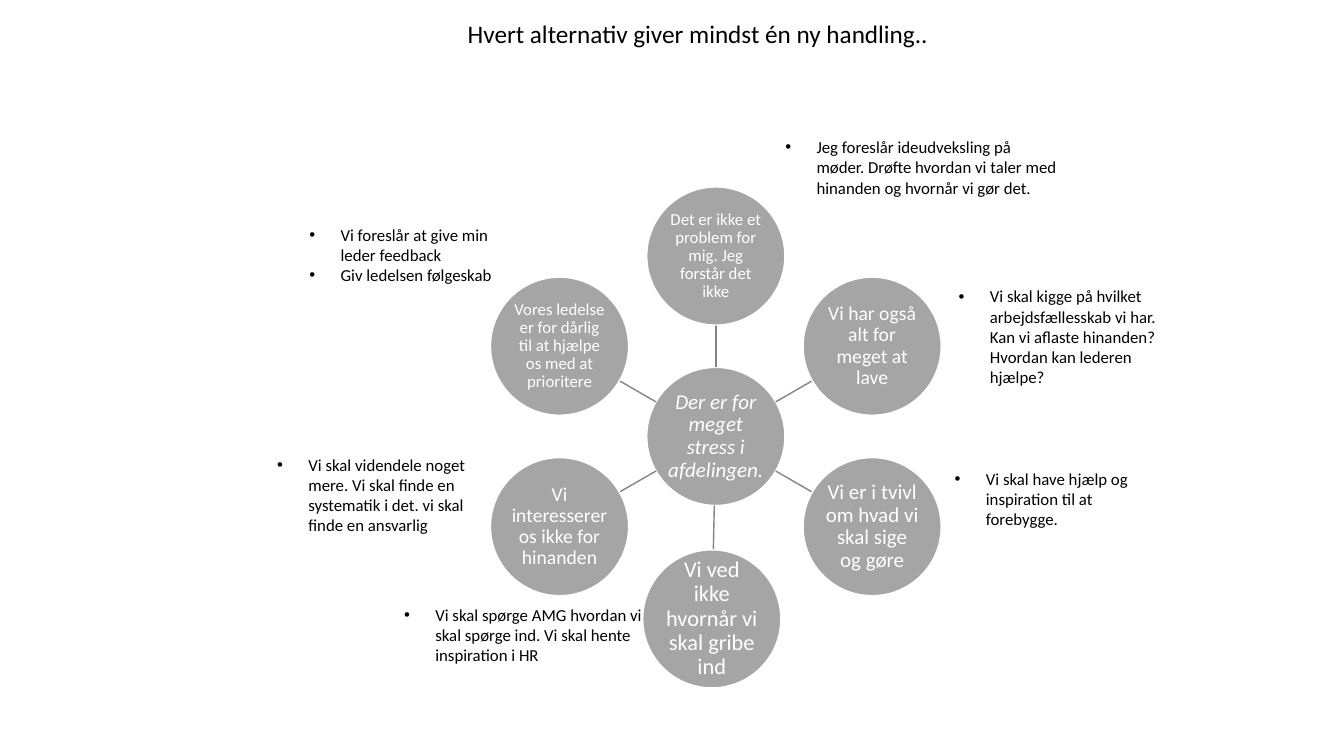
import math

from lxml import etree
from pptx import Presentation
from pptx.dml.color import RGBColor
from pptx.enum import shapes, text
from pptx.oxml.ns import qn
from pptx.util import Inches, Pt

TITLE = ("Hvert alternativ giver mindst én ny handling..", (4.54, 0.13, 5.99, 0.4))
HUB = ("Der er for meget stress i afdelingen.", 15)

# Clockwise from the top: text, type size, nudge from the ring
ALTERNATIVES = [
    ("Det er ikke et problem for mig. Jeg forstår det ikke", 12, (0, 0)),
    ("Vi har også alt for meget at lave", 14, (0, 0)),
    ("Vi er i tvivl om hvad vi skal sige og gøre", 15, (0, 0)),
    ("Vi ved ikke hvornår vi skal gribe ind", 16, (-0.04, 0.02)),
    ("Vi interesserer os ikke for hinanden", 14, (0, 0)),
    ("Vores ledelse er for dårlig til at hjælpe os med at prioritere", 12, (0, 0)),
]

# Bulleted lines, (left, top, width, height)
ACTIONS = [
    (["Vi foreslår at give min leder feedback", "Giv ledelsen følgeskab"],
     (2.97, 2.18, 2.2, 0.71)),
    (["Vi skal videndele noget mere. Vi skal finde en systematik i det. "
      "vi skal finde en ansvarlig"], (2.65, 4.46, 2.28, 0.91)),
    (["Vi skal spørge AMG hvordan vi skal spørge ind. Vi skal hente inspiration i HR"],
     (3.91, 5.95, 2.6, 0.71)),
    (["Jeg foreslår ideudveksling på møder. Drøfte hvordan vi taler med hinanden "
      "og hvornår vi gør det."], (7.69, 1.31, 2.91, 0.71)),
    (["Vi skal kigge på hvilket arbejdsfællesskab vi har. Kan vi aflaste hinanden? "
      "Hvordan kan lederen hjælpe?"], (9.41, 2.79, 2.2, 1.11)),
    (["Vi skal have hjælp og inspiration til at forebygge."], (9.37, 4.6, 2.2, 0.71)),
]

THEME = {
    "font": "Calibri",
    "title": 18,
    "action": 12,
    "ink": RGBColor(0, 0, 0),
    "white": RGBColor(255, 255, 255),
    "circle": RGBColor(0xA5, 0xA5, 0xA5),
    "spoke": RGBColor(0x84, 0x84, 0x84),
}
CENTER = (7.1, 4.33)
RING = 1.79
DIAMETER = 1.37
BULLET_INDENT = 0.31


def write(tf, lines, size, color, italic=None, align=None, spacing=None, bullet=False):
    tf.word_wrap = True
    for i, line in enumerate(lines):
        p = tf.add_paragraph() if i else tf.paragraphs[0]
        p.alignment = align
        p.line_spacing = spacing
        if bullet:
            pPr = p._p.get_or_add_pPr()
            pPr.set("marL", str(Inches(BULLET_INDENT)))
            pPr.set("indent", str(Inches(-BULLET_INDENT)))
            etree.SubElement(pPr, qn("a:buFont")).set("typeface", "Arial")
            etree.SubElement(pPr, qn("a:buChar")).set("char", "•")
        r = p.add_run()
        r.text = line
        r.font.name = THEME["font"]
        r.font.size = Pt(size)
        r.font.italic = italic
        r.font.color.rgb = color


def add_text_box(slide, lines, box, size, bullet=False):
    tf = slide.shapes.add_textbox(*map(Inches, box)).text_frame
    write(tf, lines, size, THEME["ink"], bullet=bullet)
    tf.auto_size = text.MSO_AUTO_SIZE.SHAPE_TO_FIT_TEXT


def add_circle(slide, label, center, size, italic=None):
    left, top = (c - DIAMETER / 2 for c in center)
    sp = slide.shapes.add_shape(shapes.MSO_SHAPE.OVAL, Inches(left), Inches(top),
                                Inches(DIAMETER), Inches(DIAMETER))
    sp.shadow.inherit = False
    sp.fill.solid()
    sp.fill.fore_color.rgb = THEME["circle"]
    sp.line.color.rgb = THEME["white"]
    sp.line.width = Pt(1)
    tf = sp.text_frame
    tf.margin_left = tf.margin_right = tf.margin_top = tf.margin_bottom = Inches(0.01)
    tf.vertical_anchor = text.MSO_ANCHOR.MIDDLE
    write(tf, [label], size, THEME["white"], italic=italic,
          align=text.PP_ALIGN.CENTER, spacing=0.9)


def add_spoke(slide, center):
    """Line from the edge of the hub to the edge of the circle at center."""
    dx, dy = center[0] - CENTER[0], center[1] - CENTER[1]
    edge = DIAMETER / 2 / math.hypot(dx, dy)
    ends = [(CENTER[0] + dx * t, CENTER[1] + dy * t) for t in (edge, 1 - edge)]
    line = slide.shapes.add_connector(shapes.MSO_CONNECTOR.STRAIGHT,
                                      *(Inches(v) for end in ends for v in end))
    line.line.color.rgb = THEME["spoke"]
    line.line.width = Pt(1)
    etree.SubElement(line._element.spPr, qn("a:effectLst"))


def main():
    prs = Presentation()
    prs.slide_width, prs.slide_height = Inches(13.33), Inches(7.5)
    slide = prs.slides.add_slide(prs.slide_layouts[6])

    add_circle(slide, HUB[0], CENTER, HUB[1], italic=True)
    for i, (label, size, nudge) in enumerate(ALTERNATIVES):
        angle = math.tau * i / len(ALTERNATIVES)
        center = (CENTER[0] + RING * math.sin(angle) + nudge[0],
                  CENTER[1] - RING * math.cos(angle) + nudge[1])
        add_spoke(slide, center)
        add_circle(slide, label, center, size)

    add_text_box(slide, [TITLE[0]], TITLE[1], THEME["title"])
    for lines, box in ACTIONS:
        add_text_box(slide, lines, box, THEME["action"], bullet=True)

    prs.save("out.pptx")


if __name__ == "__main__":
    main()
